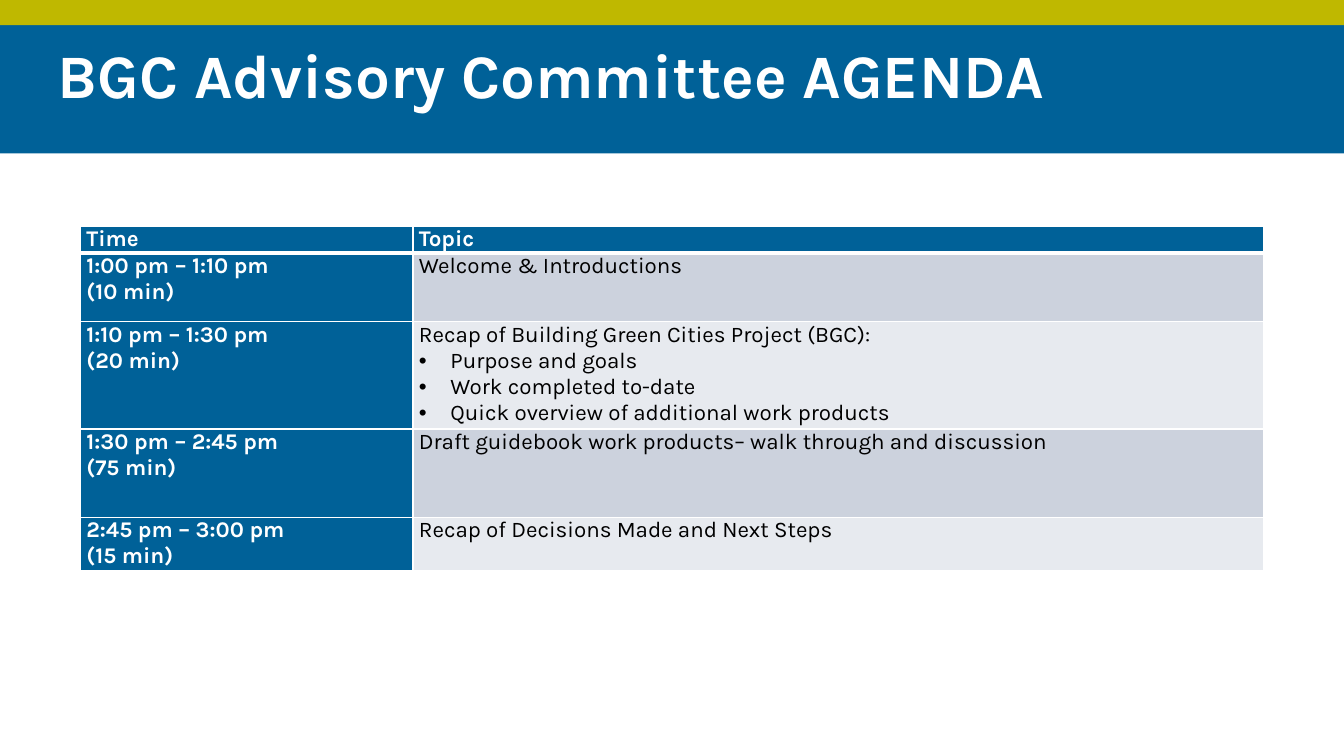
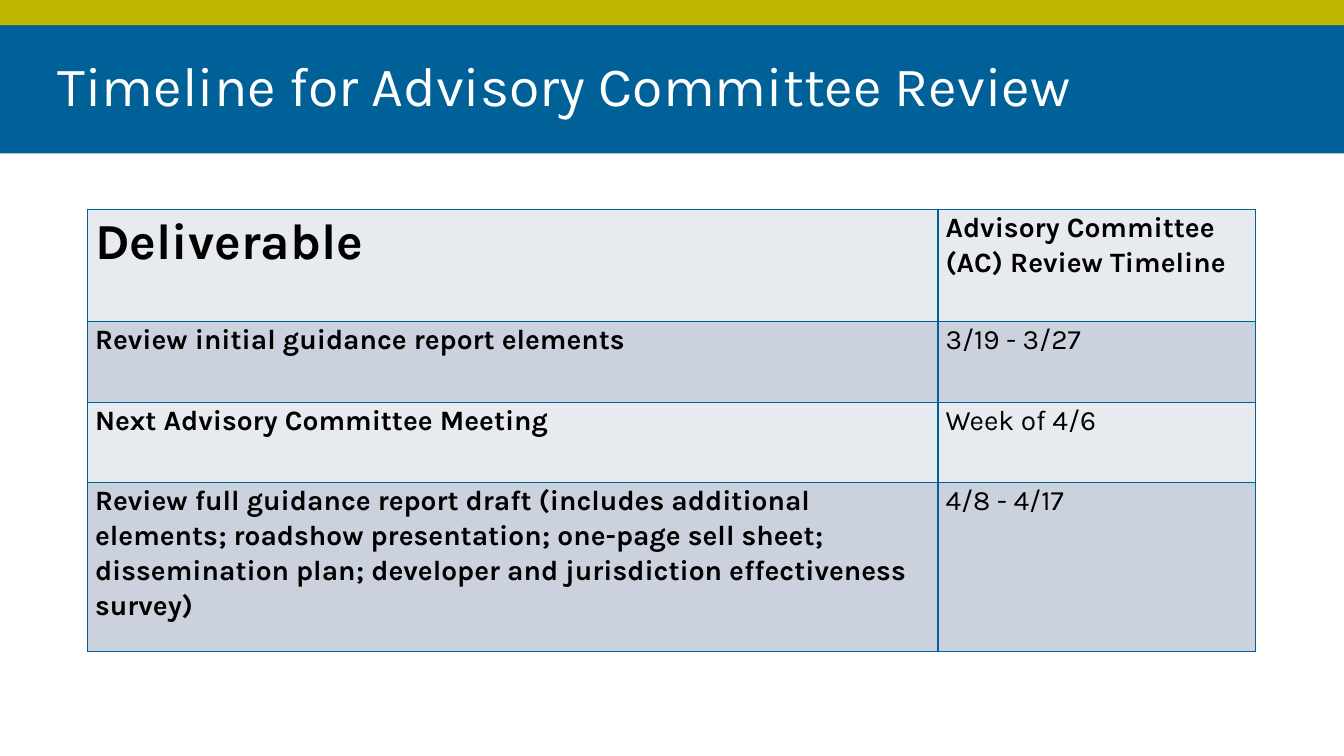
from dataclasses import dataclass

from lxml.etree import SubElement
from pptx import Presentation
from pptx.dml.color import RGBColor
from pptx.enum.shapes import MSO_SHAPE as Shape
from pptx.enum.text import MSO_ANCHOR as Anchor
from pptx.oxml.ns import qn
from pptx.util import Pt

FONT = "Karla"
BLUE, LIME, WHITE, BLACK = "006198", "BFB800", "FFFFFF", "000000"
STRIPES = ("E7EAEF", "CCD2DD")
SLIDE_W, SLIDE_H = 960, 540
BULLET_INDENT = 22.5


@dataclass
class Band:
    height: float
    color: str


@dataclass
class Cell:
    lines: list[str]
    fill: str
    size: float
    color: str = BLACK
    bold: bool = False
    bullets_from: int | None = None


@dataclass
class Grid:
    left: float
    top: float
    cols: list[float]
    rows: list[float]
    cells: list[list[Cell]]
    border: str
    margin: float
    spacing: float | None = None
    header_rule: float = 1


BANDS = (Band(109.5, BLUE), Band(18, LIME))


def rgb(color: str) -> RGBColor:
    return RGBColor.from_string(color)


def write(p, text: str, *, size: float, color: str, bold: bool = False,
          spacing: float | None = None, bullet: bool = False) -> None:
    r = p.add_run()
    r.text = text
    r.font.name = FONT
    r.font.size = Pt(size)
    r.font.bold = bold
    r.font.color.rgb = rgb(color)
    if spacing:
        p.line_spacing = spacing
    if bullet:
        props = p._p.get_or_add_pPr()
        props.set("marL", str(Pt(BULLET_INDENT)))
        props.set("indent", str(-Pt(BULLET_INDENT)))
        SubElement(props, qn("a:buFont"), typeface="Arial")
        SubElement(props, qn("a:buChar"), char="•")


def add_titled_slide(prs, title: str, *, top: float, size: float, bold: bool = False):
    s = prs.slides.add_slide(prs.slide_layouts[6])
    for band in BANDS:
        sp = s.shapes.add_shape(Shape.RECTANGLE, 0, 0, Pt(SLIDE_W), Pt(band.height))
        sp.shadow.inherit = False
        sp.fill.solid()
        sp.fill.fore_color.rgb = rgb(band.color)
        sp.line.fill.background()
    tf = s.shapes.add_textbox(Pt(34), Pt(top), Pt(860), Pt(52)).text_frame
    tf.word_wrap = True
    tf.vertical_anchor = Anchor.MIDDLE
    write(tf.paragraphs[0], title, size=size, color=WHITE, bold=bold, spacing=0.9)
    return s


def add_borders(cell, color: str, widths: dict[str, float]) -> None:
    props = cell._tc.get_or_add_tcPr()
    for side in "LRTB":
        line = SubElement(props, qn(f"a:ln{side}"), w=str(Pt(widths.get(side, 1))))
        fill = SubElement(line, qn("a:solidFill"))
        SubElement(fill, qn("a:srgbClr"), val=color)


def fill_cell(cell, data: Cell, grid: Grid, widths: dict[str, float]) -> None:
    add_borders(cell, grid.border, widths)
    cell.fill.solid()
    cell.fill.fore_color.rgb = rgb(data.fill)
    cell.margin_left = cell.margin_right = Pt(grid.margin)
    cell.margin_top = cell.margin_bottom = 0
    tf = cell.text_frame
    for i, line in enumerate(data.lines):
        p = tf.add_paragraph() if i else tf.paragraphs[0]
        bullet = data.bullets_from is not None and i >= data.bullets_from
        write(p, line, size=data.size, color=data.color, bold=data.bold,
              spacing=grid.spacing, bullet=bullet)


def add_grid(s, grid: Grid) -> None:
    table = s.shapes.add_table(len(grid.rows), len(grid.cols), Pt(grid.left), Pt(grid.top),
                               Pt(sum(grid.cols)), Pt(sum(grid.rows))).table
    for col, width in zip(table.columns, grid.cols):
        col.width = Pt(width)
    for row, height in zip(table.rows, grid.rows):
        row.height = Pt(height)
    rule_sides = {0: "B", 1: "T"}
    for i, row in enumerate(grid.cells):
        widths = {rule_sides[i]: grid.header_rule} if i in rule_sides else {}
        for j, data in enumerate(row):
            fill_cell(table.cell(i, j), data, grid, widths)


def agenda_grid() -> Grid:
    def label(*lines: str) -> Cell:
        return Cell(list(lines), BLUE, 16, WHITE, True)

    items = [
        ("1:00 pm – 1:10 pm", "(10 min)", ["Welcome & Introductions"]),
        ("1:10 pm – 1:30 pm", "(20 min)", [
            "Recap of Building Green Cities Project (BGC):",
            "Purpose and goals",
            "Work completed to-date",
            "Quick overview of additional work products",
        ]),
        ("1:30 pm – 2:45 pm", "(75 min)",
         ["Draft guidebook work products– walk through and discussion"]),
        ("2:45 pm – 3:00 pm", "(15 min)", ["Recap of Decisions Made and Next Steps"]),
    ]
    cells = [[label("Time"), label("Topic")]]
    for i, (time, length, topic) in enumerate(items, 1):
        cells.append([label(time, length), Cell(topic, STRIPES[i % 2], 16, bullets_from=1)])
    return Grid(57.5, 161.5, [237.5, 607.5], [18, 49, 75, 63, 37.5], cells,
                border=WHITE, margin=4.3, header_rule=3)


def timeline_grid() -> Grid:
    items = [
        ("Deliverable", "Advisory Committee (AC) Review Timeline"),
        ("Review initial guidance report elements", "3/19 - 3/27"),
        ("Next Advisory Committee Meeting", "Week of 4/6"),
        ("Review full guidance report draft (includes additional elements; roadshow "
         "presentation; one-page sell sheet; dissemination plan; developer and "
         "jurisdiction effectiveness survey)", "4/8 - 4/17"),
    ]
    cells = []
    for i, (deliverable, review) in enumerate(items):
        header, fill = i == 0, STRIPES[i % 2]
        cells.append([Cell([deliverable], fill, 36 if header else 20, bold=True),
                      Cell([review], fill, 20, bold=header)])
    return Grid(62.5, 149.5, [607.5, 227], [80, 58, 57, 121], cells,
                border=BLUE, margin=5.4, spacing=1.07)


def main() -> None:
    prs = Presentation()
    prs.slide_width, prs.slide_height = Pt(SLIDE_W), Pt(SLIDE_H)
    s = add_titled_slide(prs, "BGC Advisory Committee AGENDA", top=30, size=44.1, bold=True)
    add_grid(s, agenda_grid())
    s = add_titled_slide(prs, "Timeline for Advisory Committee Review", top=37.5, size=39.6)
    add_grid(s, timeline_grid())
    prs.save("out.pptx")


if __name__ == "__main__":
    main()
